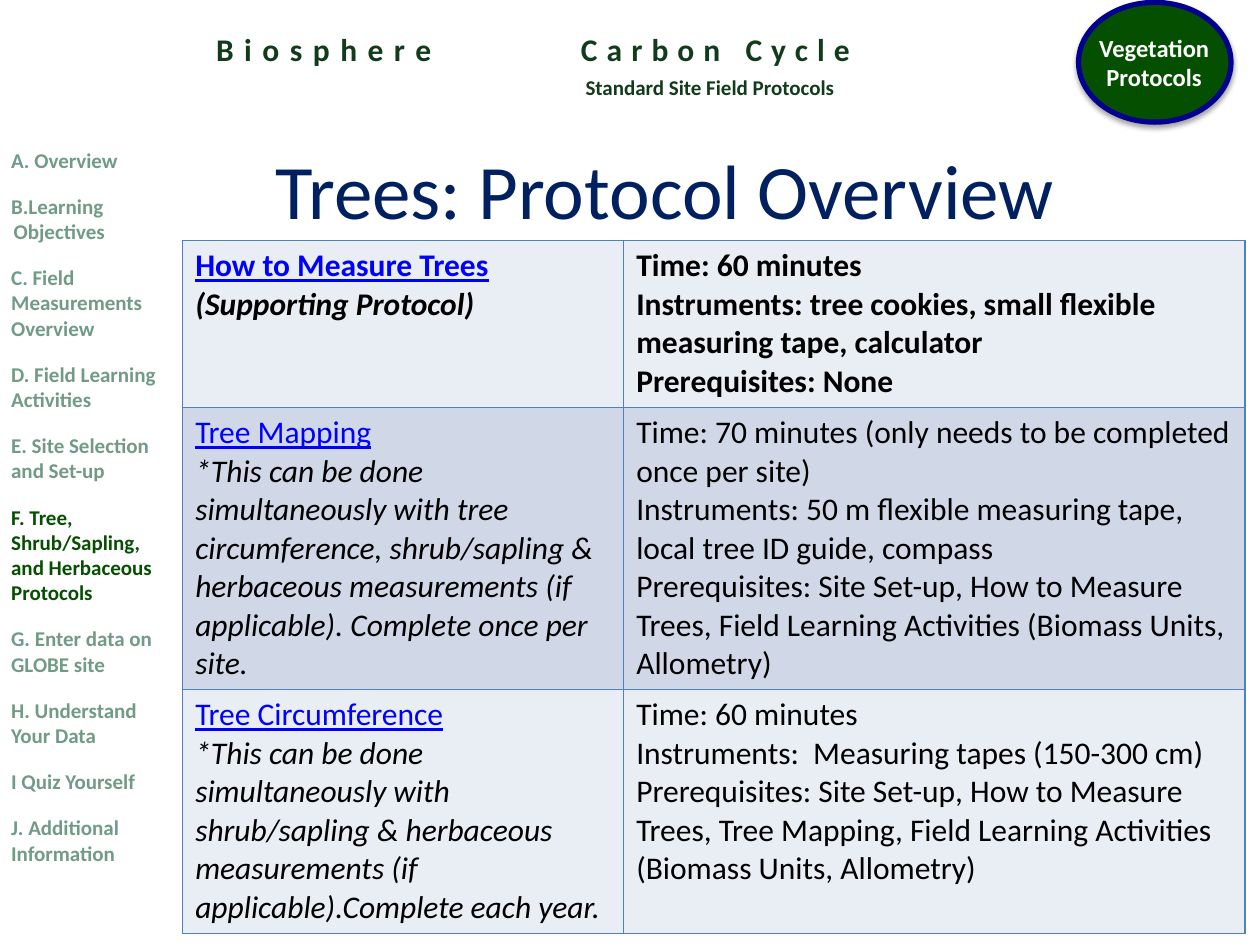
from lxml.etree import SubElement
from pptx import Presentation
from pptx.dml.color import RGBColor
from pptx.enum.shapes import MSO_SHAPE
from pptx.enum.text import MSO_ANCHOR, PP_ALIGN
from pptx.oxml import parse_xml
from pptx.oxml.ns import nsdecls, qn
from pptx.util import Pt

COLORS = {
    "header": "123B1C", "badge": "055000", "badge_line": "000090",
    "muted": "719B86", "title": "002060", "link": "0000FF",
    "text": "000000", "white": "FFFFFF", "border": "4F81BD",
    "light_row": "E9EDF4", "dark_row": "D0D8E8",
}
MENU = [
    " Overview", "Learning Objectives", "C. Field Measurements Overview",
    "D. Field Learning Activities", "E. Site Selection and Set-up",
    "F. Tree, Shrub/Sapling, and Herbaceous Protocols",
    "G. Enter data on GLOBE site", "H. Understand Your Data",
    "I Quiz Yourself", "J. Additional Information",
]
NUMBERED_ITEMS = 2
CURRENT_ITEM = 5
PROTOCOLS = [
    (["How to Measure Trees", "(Supporting Protocol)"],
     ["Time: 60 minutes",
      "Instruments: tree cookies, small flexible measuring tape, calculator",
      "Prerequisites: None"]),
    (["Tree Mapping",
      "*This can be done simultaneously with tree circumference, shrub/sapling & "
      "herbaceous measurements (if applicable). Complete once per site."],
     ["Time: 70 minutes (only needs to be completed once per site)",
      "Instruments: 50 m flexible measuring tape, local tree ID guide, compass",
      "Prerequisites: Site Set-up, How to Measure Trees, Field Learning Activities "
      "(Biomass Units, Allometry)"]),
    (["Tree Circumference",
      "*This can be done simultaneously with shrub/sapling & herbaceous "
      "measurements (if applicable).Complete each year."],
     ["Time: 60 minutes",
      "Instruments:  Measuring tapes (150-300 cm)",
      "Prerequisites: Site Set-up, How to Measure Trees, Tree Mapping, "
      "Field Learning Activities (Biomass Units, Allometry)"]),
]
COLUMN_WIDTHS = [252, 355]
ROW_HEIGHTS = [95.4, 161.2, 139.4]


def rgb(name):
    return RGBColor.from_string(COLORS[name])


def style(paragraph, size, color, bold=False, italic=False, underline=False, spacing=0):
    for run in paragraph.runs:
        font = run.font
        font.name = "Calibri"
        font.size = Pt(size)
        font.bold = bold
        font.italic = italic
        font.underline = underline
        font.color.rgb = rgb(color)
        if spacing:
            run._r.get_or_add_rPr().set("spc", str(round(spacing * 100)))


def add_text(slide, box, text, size, color, bold=True, align=PP_ALIGN.LEFT,
             anchor=MSO_ANCHOR.TOP, spacing=0):
    frame = slide.shapes.add_textbox(*map(Pt, box)).text_frame
    frame.word_wrap = True
    frame.vertical_anchor = anchor
    frame.text = text
    for paragraph in frame.paragraphs:
        paragraph.alignment = align
        style(paragraph, size, color, bold, spacing=spacing)
    return frame


def add_header(slide, left, top, width, height):
    add_text(slide, (left + 115, top, 190, 29), "Biosphere", 18, "header", spacing=6)
    add_text(slide, (left + 323.5, top, 220, 29), "Carbon Cycle", 18, "header", spacing=5.2)
    add_text(slide, (left + 226.1, top + 25.2, 356.4, height - 25.2),
             "Standard Site Field Protocols", 12, "header", align=PP_ALIGN.CENTER)


def add_badge(slide, left, top, width, height):
    badge = slide.shapes.add_shape(MSO_SHAPE.OVAL, *map(Pt, (left, top, width, height)))
    badge.fill.solid()
    badge.fill.fore_color.rgb = rgb("badge")
    badge.line.color.rgb = rgb("badge_line")
    badge.line.width = Pt(3)
    badge._element.spPr.append(parse_xml(
        f'<a:effectLst {nsdecls("a")}><a:outerShdw blurRad="{Pt(3.1)}" dist="{Pt(1.8)}" '
        f'dir="5400000" rotWithShape="0"><a:srgbClr val="{COLORS["text"]}">'
        '<a:alpha val="35000"/></a:srgbClr></a:outerShdw></a:effectLst>'))
    add_text(slide, (left + 2.9, top + 13.7, width - 6.5, 41), "Vegetation Protocols",
             14, "white", align=PP_ALIGN.CENTER)


def add_menu(slide, left, top, width, height):
    frame = add_text(slide, (left, top, width, height), "\n".join(MENU), 12, "muted")
    for index, item in enumerate(frame.paragraphs):
        item.space_after = Pt(12)
        if index < NUMBERED_ITEMS:
            properties = item._p.get_or_add_pPr()
            properties.set("marL", str(Pt(1.44)))
            properties.set("indent", str(-Pt(1.44)))
            SubElement(properties, qn("a:buAutoNum"), type="alphaUcPeriod")
    style(frame.paragraphs[CURRENT_ITEM], 12, "badge", bold=True)


def add_title(slide, left, top, width, height):
    add_text(slide, (left, top, width, height), "Trees: Protocol Overview", 44, "title",
             bold=False, align=PP_ALIGN.CENTER, anchor=MSO_ANCHOR.MIDDLE)


def add_borders(cell):
    properties = cell._tc.get_or_add_tcPr()
    for index, side in enumerate(("lnL", "lnR", "lnT", "lnB")):
        properties.insert(index, parse_xml(
            f'<a:{side} {nsdecls("a")} w="{Pt(1)}"><a:solidFill>'
            f'<a:srgbClr val="{COLORS["border"]}"/></a:solidFill></a:{side}>'))


def add_protocol_table(slide, left, top, width, height):
    table = slide.shapes.add_table(len(PROTOCOLS), len(COLUMN_WIDTHS),
                                   *map(Pt, (left, top, width, height))).table
    for column, column_width in zip(table.columns, COLUMN_WIDTHS):
        column.width = Pt(column_width)
    for row_index, protocol in enumerate(PROTOCOLS):
        table.rows[row_index].height = Pt(ROW_HEIGHTS[row_index])
        for column_index, lines in enumerate(protocol):
            cell = table.cell(row_index, column_index)
            cell.fill.solid()
            cell.fill.fore_color.rgb = rgb("dark_row" if row_index % 2 else "light_row")
            add_borders(cell)
            cell.text_frame.text = "\n".join(lines)
            for line_index, line in enumerate(cell.text_frame.paragraphs):
                is_link = column_index == 0 and line_index == 0
                is_note = column_index == 0 and line_index > 0
                style(line, 18, "link" if is_link else "text", bold=row_index == 0,
                      italic=is_note, underline=is_link)


def main():
    presentation = Presentation()
    presentation.slide_width = Pt(720)
    presentation.slide_height = Pt(540)
    slide = presentation.slides.add_slide(presentation.slide_layouts[6])
    add_header(slide, 1.4, 13.7, 720, 46.8)
    add_badge(slide, 616.3, 1.4, 87.1, 68.4)
    add_menu(slide, -0.7, 80.6, 102.2, 421.9)
    add_title(slide, 104.4, 77, 551.5, 61.2)
    add_protocol_table(slide, 104.4, 137.5, sum(COLUMN_WIDTHS), sum(ROW_HEIGHTS))
    presentation.save("out.pptx")


if __name__ == "__main__":
    main()
